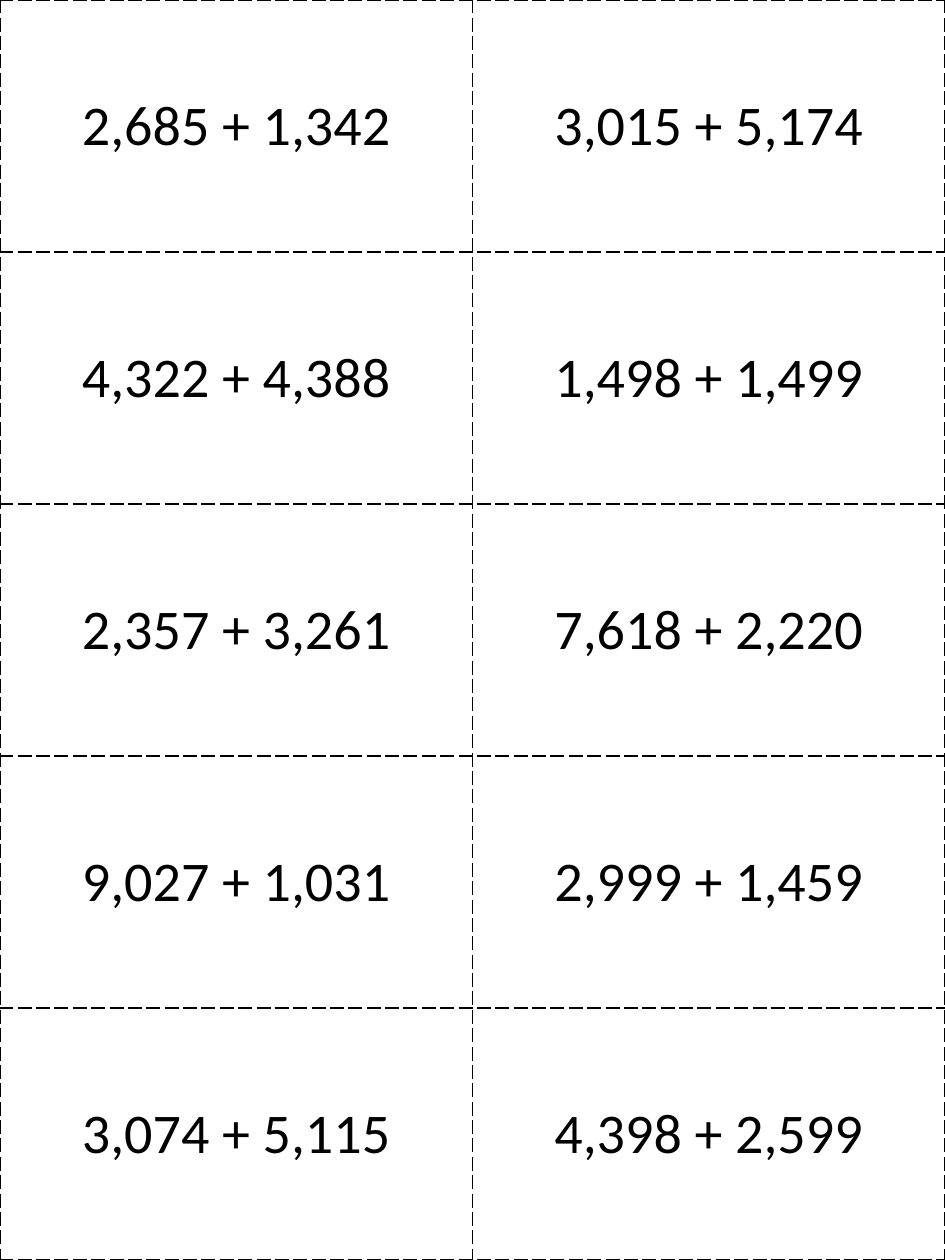
"""Build a page of ten addition cards with dashed cutting lines."""
from lxml.etree import SubElement
from pptx import Presentation
from pptx.dml.color import RGBColor
from pptx.enum.text import MSO_ANCHOR, PP_ALIGN
from pptx.oxml.ns import qn
from pptx.util import Inches, Pt

SUMS = [
    ("2,685 + 1,342", "3,015 + 5,174"),
    ("4,322 + 4,388", "1,498 + 1,499"),
    ("2,357 + 3,261", "7,618 + 2,220"),
    ("9,027 + 1,031", "2,999 + 1,459"),
    ("3,074 + 5,115", "4,398 + 2,599"),
]
THEME = {"font": "Calibri", "size": 32, "ink": "000000", "line": 1, "dash": "lgDash"}
PAGE_WIDTH, PAGE_HEIGHT = 7.5, 10


def add_cutting_lines(cell):
    properties = cell._tc.get_or_add_tcPr()
    for position, side in enumerate(("lnL", "lnR", "lnT", "lnB")):
        line = properties.makeelement(qn(f"a:{side}"), {"w": str(Pt(THEME["line"]))})
        properties.insert(position, line)
        fill = SubElement(line, qn("a:solidFill"))
        SubElement(fill, qn("a:srgbClr"), val=THEME["ink"])
        SubElement(line, qn("a:prstDash"), val=THEME["dash"])


def fill_card(cell, addition):
    cell.fill.background()
    cell.vertical_anchor = MSO_ANCHOR.MIDDLE
    para = cell.text_frame.paragraphs[0]
    para.alignment = PP_ALIGN.CENTER
    span = para.add_run()
    span.text = addition
    span.font.name = THEME["font"]
    span.font.size = Pt(THEME["size"])
    span.font.bold = False
    span.font.color.rgb = RGBColor.from_string(THEME["ink"])
    add_cutting_lines(cell)


def main():
    deck = Presentation()
    deck.slide_width, deck.slide_height = Inches(PAGE_WIDTH), Inches(PAGE_HEIGHT)
    page = deck.slides.add_slide(deck.slide_layouts[6])
    cards = page.shapes.add_table(
        len(SUMS), len(SUMS[0]), 0, 0, deck.slide_width, deck.slide_height
    ).table
    cards.first_row = cards.horz_banding = False
    for row, additions in enumerate(SUMS):
        for column, addition in enumerate(additions):
            fill_card(cards.cell(row, column), addition)
    deck.save("out.pptx")


if __name__ == "__main__":
    main()
